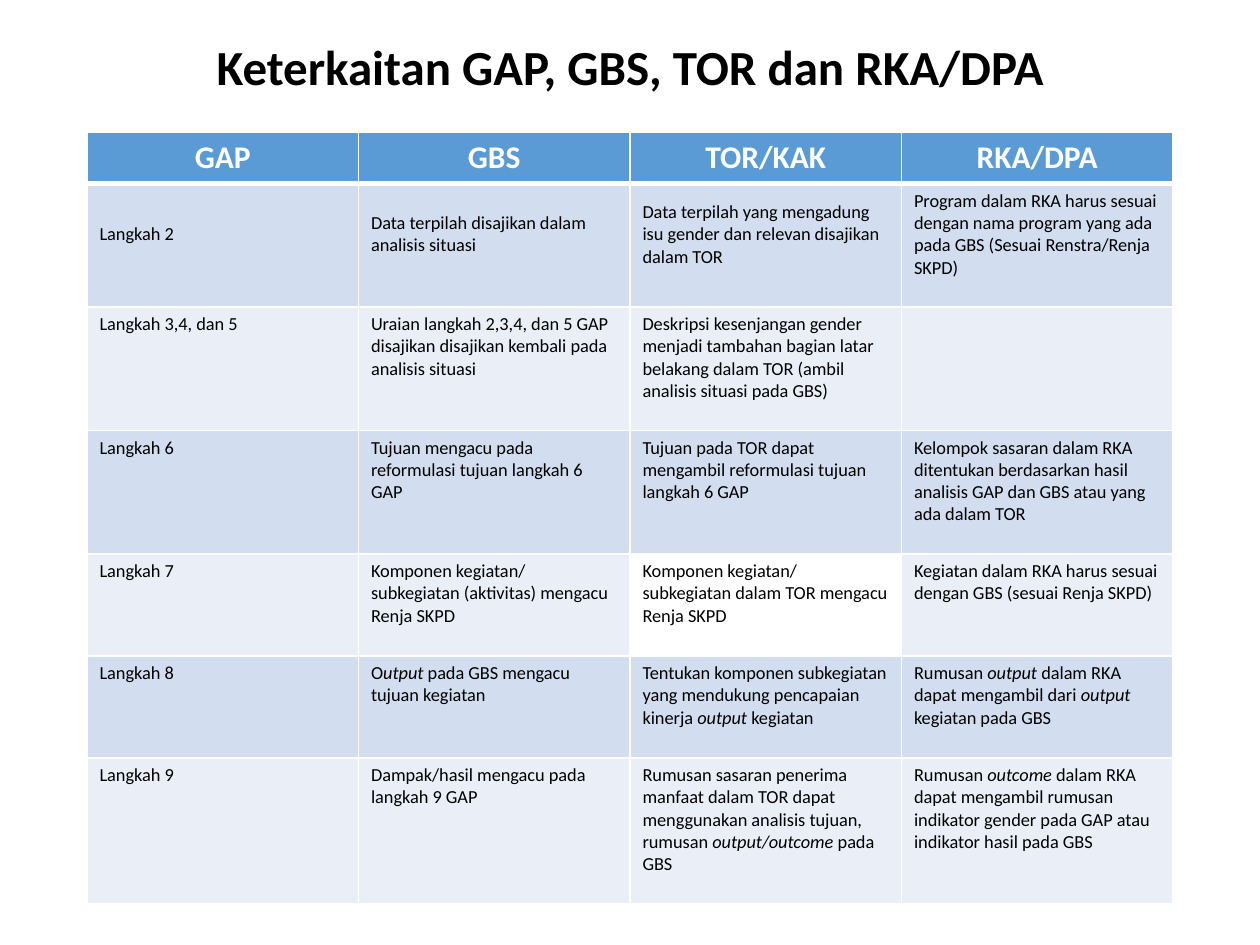
"""Build the slide that links GAP, GBS, TOR and RKA/DPA step by step."""
from dataclasses import dataclass

import lxml.etree
import pptx
import pptx.dml.color
import pptx.enum.text
import pptx.oxml.ns
import pptx.util

FONT = "Calibri"
COLORS = {"header": "5B9BD5", "odd": "D2DEEF", "even": "EAEFF7",
          "white": "FFFFFF", "black": "000000"}
WIDTH, HEIGHT = pptx.util.Inches(10), pptx.util.Inches(7.5)
LEFT, SPAN = 0.069, 0.862
MIDDLE = pptx.enum.text.MSO_ANCHOR.MIDDLE
CENTER = pptx.enum.text.PP_ALIGN.CENTER


@dataclass
class Step:
    """A table row: height in inches and texts with *italic* parts."""
    height: float
    texts: tuple[str, ...]


HEADER = Step(0.4, ("GAP", "GBS", "TOR/KAK", "RKA/DPA"))
STEPS = [
    Step(0.98, ("Langkah 2",
                "Data terpilah disajikan dalam analisis situasi",
                "Data terpilah yang mengadung isu gender dan relevan disajikan dalam TOR",
                "Program dalam RKA harus sesuai dengan nama program yang ada pada GBS "
                "(Sesuai Renstra/Renja SKPD)")),
    Step(0.98, ("Langkah 3,4, dan 5",
                "Uraian langkah 2,3,4, dan 5 GAP disajikan disajikan kembali pada analisis situasi",
                "Deskripsi kesenjangan gender menjadi tambahan bagian latar belakang dalam TOR "
                "(ambil analisis situasi pada GBS)",
                "")),
    Step(0.98, ("Langkah 6",
                "Tujuan mengacu pada reformulasi tujuan langkah 6 GAP",
                "Tujuan pada TOR dapat mengambil reformulasi tujuan langkah 6 GAP",
                "Kelompok sasaran dalam RKA ditentukan berdasarkan hasil analisis GAP dan GBS "
                "atau yang ada dalam TOR")),
    Step(0.81, ("Langkah 7",
                "Komponen kegiatan/ subkegiatan (aktivitas) mengacu Renja SKPD",
                "Komponen kegiatan/ subkegiatan dalam TOR mengacu Renja SKPD",
                "Kegiatan dalam RKA harus sesuai dengan GBS (sesuai Renja SKPD)")),
    Step(0.81, ("Langkah 8",
                "O*utput *pada GBS mengacu tujuan kegiatan",
                "Tentukan komponen subkegiatan yang mendukung pencapaian kinerja *output *kegiatan",
                "Rumusan *output *dalam RKA dapat mengambil dari *output *kegiatan pada GBS")),
    Step(1.16, ("Langkah 9",
                "Dampak/hasil mengacu pada langkah 9 GAP",
                "Rumusan sasaran penerima manfaat dalam TOR dapat menggunakan analisis tujuan, "
                "rumusan *output/outcome *pada GBS",
                "Rumusan *outcome *dalam RKA dapat mengambil rumusan indikator gender pada GAP "
                "atau indikator hasil pada GBS")),
]


def rgb(name: str) -> pptx.dml.color.RGBColor:
    """Look up a named colour."""
    return pptx.dml.color.RGBColor.from_string(COLORS[name])


def style(p, size: float, color: str, bold: bool) -> None:
    """Set the font of a paragraph."""
    p.font.name, p.font.size, p.font.bold = FONT, pptx.util.Pt(size), bold
    p.font.color.rgb = rgb(color)


def add_borders(cell, top: float, bottom: float) -> None:
    """Draw white cell borders, with top and bottom widths in points."""
    tc_pr = cell._tc.get_or_add_tcPr()
    for i, (side, width) in enumerate(zip("LRTB", (1, 1, top, bottom))):
        ln = lxml.etree.Element(pptx.oxml.ns.qn(f"a:ln{side}"), w=str(pptx.util.Pt(width)))
        fill = lxml.etree.SubElement(ln, pptx.oxml.ns.qn("a:solidFill"))
        lxml.etree.SubElement(fill, pptx.oxml.ns.qn("a:srgbClr"), val=COLORS["white"])
        tc_pr.insert(i, ln)


def fill_cell(cell, text: str, fill: str, row: int) -> None:
    """Write and format one table cell."""
    cell.fill.solid()
    cell.fill.fore_color.rgb = rgb(fill)
    add_borders(cell, 3 if row == 1 else 1, 3 if row == 0 else 1)
    p = cell.text_frame.paragraphs[0]
    if row == 0:
        p.alignment = CENTER
        style(p, 18, "white", True)
    else:
        style(p, 10.5, "black", False)
    if row == 1:
        cell.vertical_anchor = MIDDLE
        cell.margin_bottom = pptx.util.Inches(0.22)
    for i, part in enumerate(text.split("*")):
        if part:
            r = p.add_run()
            r.text = part
            if i % 2:
                r.font.italic = True


def add_steps_table(s) -> None:
    """Add the table of steps with banded rows."""
    rows = [HEADER, *STEPS]
    height = pptx.util.Inches(sum(step.height for step in rows))
    table = s.shapes.add_table(len(rows), len(HEADER.texts), int(LEFT * WIDTH),
                               int(0.14 * HEIGHT), int(SPAN * WIDTH), height).table
    for i, step in enumerate(rows):
        table.rows[i].height = pptx.util.Inches(step.height)
        band = "header" if i == 0 else "odd" if i % 2 else "even"
        for j, text in enumerate(step.texts):
            fill_cell(table.cell(i, j), text, "white" if (i, j) == (4, 2) else band, i)


def add_title(s, text: str) -> None:
    """Place and format the title placeholder."""
    sp = s.shapes.title
    sp.left, sp.top = int(LEFT * WIDTH), int(0.028 * HEIGHT)
    sp.width, sp.height = int(SPAN * WIDTH), int(0.092 * HEIGHT)
    sp.fill.solid()
    sp.fill.fore_color.rgb = rgb("white")
    tf = sp.text_frame
    tf.text, tf.vertical_anchor = text, MIDDLE
    p = tf.paragraphs[0]
    p.alignment, p.line_spacing = CENTER, 0.9
    style(p, 28, "black", True)


def main() -> None:
    """Build and save the presentation."""
    prs = pptx.Presentation()
    prs.slide_width, prs.slide_height = WIDTH, HEIGHT
    s = prs.slides.add_slide(prs.slide_layouts[5])
    add_title(s, "Keterkaitan GAP, GBS, TOR dan RKA/DPA")
    add_steps_table(s)
    prs.save("out.pptx")


if __name__ == "__main__":
    main()
